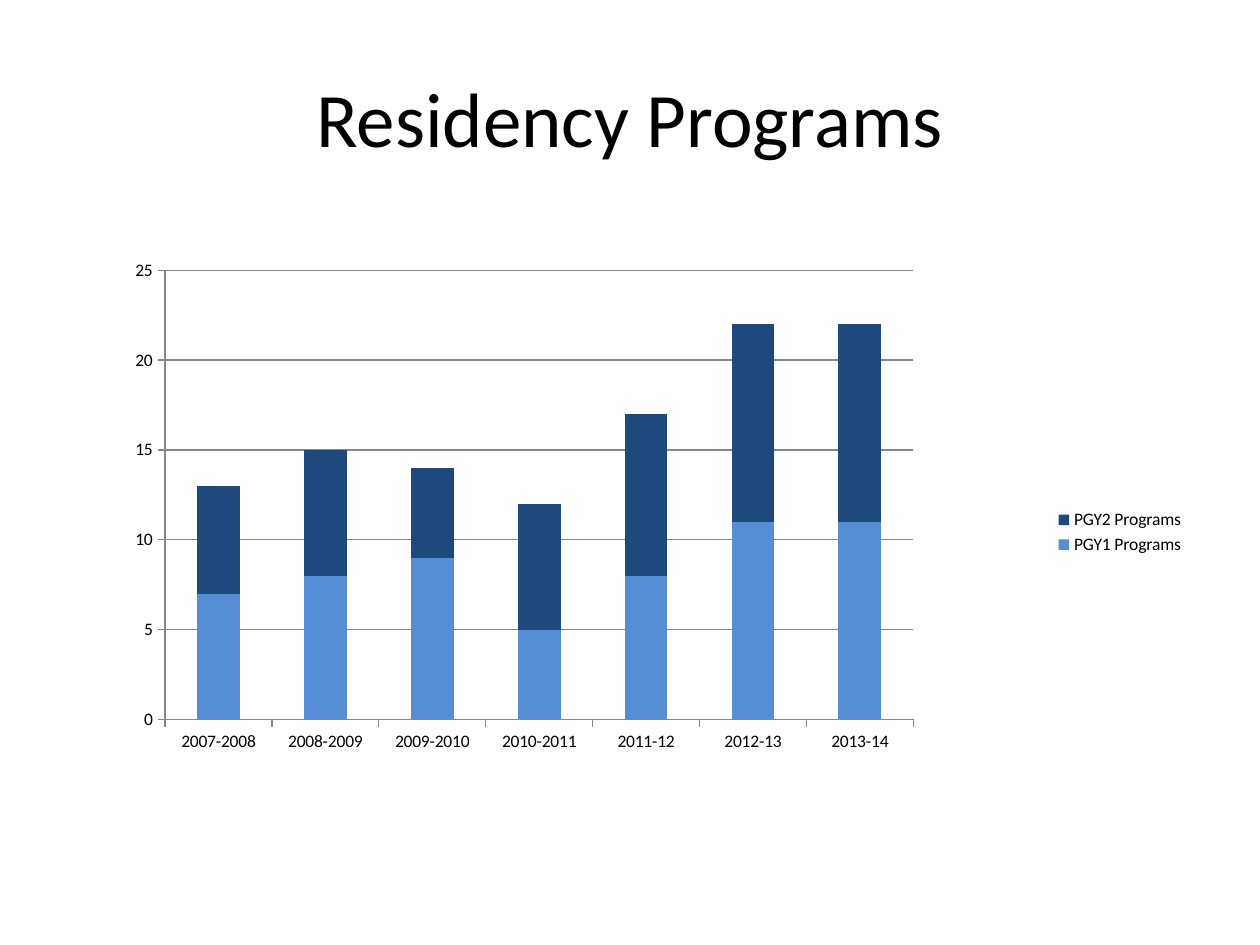
from lxml.etree import SubElement
from pptx import Presentation
from pptx.chart.data import CategoryChartData
from pptx.dml.color import RGBColor
from pptx.enum.chart import XL_CHART_TYPE, XL_LEGEND_POSITION, XL_TICK_MARK
from pptx.enum.text import MSO_ANCHOR, PP_ALIGN
from pptx.oxml.ns import qn
from pptx.util import Pt

COLOURS = {"text": "000000", "line": "878787", "PGY1": "558ED5", "PGY2": "1F497D"}
FONT = "Calibri"
YEARS = ["2007-2008", "2008-2009", "2009-2010", "2010-2011",
         "2011-12", "2012-13", "2013-14"]
PROGRAMS = {"PGY1": [7, 8, 9, 5, 8, 11, 11], "PGY2": [6, 7, 5, 7, 9, 11, 11]}
PLOT_AREA = {"x": 0.09, "y": 0.08, "w": 0.66, "h": 0.72}


def colour(name):
    return RGBColor.from_string(COLOURS[name])


def set_values(target, values):
    for name, value in values.items():
        setattr(target, name, value)


def style_font(font, size):
    set_values(font, {"name": FONT, "size": Pt(size)})
    font.color.rgb = colour("text")


def style_line(line):
    line.color.rgb = colour("line")
    line.width = Pt(0.75)


def add_title(page, text):
    box = page.shapes.add_textbox(Pt(36), Pt(21.6), Pt(648), Pt(90))
    set_values(box.text_frame, {"word_wrap": True,
                                "vertical_anchor": MSO_ANCHOR.MIDDLE})
    para = box.text_frame.paragraphs[0]
    para.alignment = PP_ALIGN.CENTER
    span = para.add_run()
    span.text = text
    style_font(span.font, 44)


def place_plot(chart, area):
    """Fix the inner plot area as fractions of the chart."""
    plot_area = chart._chartSpace.find(".//" + qn("c:plotArea"))
    for old in plot_area.findall(qn("c:layout")):
        plot_area.remove(old)
    layout = SubElement(plot_area, qn("c:layout"))
    plot_area.insert(0, layout)
    manual = SubElement(layout, qn("c:manualLayout"))
    settings = {"layoutTarget": "inner", "xMode": "edge", "yMode": "edge", **area}
    for tag, value in settings.items():
        SubElement(manual, qn("c:" + tag)).set("val", str(value))


def add_program_chart(page):
    data = CategoryChartData()
    data.categories = YEARS
    for name, counts in PROGRAMS.items():
        data.add_series(f"{name} Programs", counts)
    chart = page.shapes.add_chart(XL_CHART_TYPE.COLUMN_STACKED, Pt(36), Pt(126),
                                  Pt(648), Pt(356.4), data).chart
    style_font(chart.font, 10)
    set_values(chart, {"has_title": False, "has_legend": True})
    set_values(chart.legend, {"position": XL_LEGEND_POSITION.RIGHT,
                              "include_in_layout": False})
    place_plot(chart, PLOT_AREA)

    # Columns
    plot = chart.plots[0]
    set_values(plot, {"gap_width": 150, "overlap": 100, "vary_by_categories": False})
    for series, name in zip(plot.series, PROGRAMS):
        series.format.fill.solid()
        series.format.fill.fore_color.rgb = colour(name)

    # Axes and gridlines
    for axis in (chart.category_axis, chart.value_axis):
        set_values(axis, {"major_tick_mark": XL_TICK_MARK.OUTSIDE,
                          "minor_tick_mark": XL_TICK_MARK.NONE})
        style_line(axis.format.line)
    set_values(chart.value_axis, {"minimum_scale": 0, "maximum_scale": 25,
                                  "major_unit": 5, "has_major_gridlines": True})
    style_line(chart.value_axis.major_gridlines.format.line)


def main():
    deck = Presentation()
    set_values(deck, {"slide_width": Pt(720), "slide_height": Pt(540)})
    page = deck.slides.add_slide(deck.slide_layouts[6])
    add_title(page, "Residency Programs")
    add_program_chart(page)
    deck.save("out.pptx")


if __name__ == "__main__":
    main()
